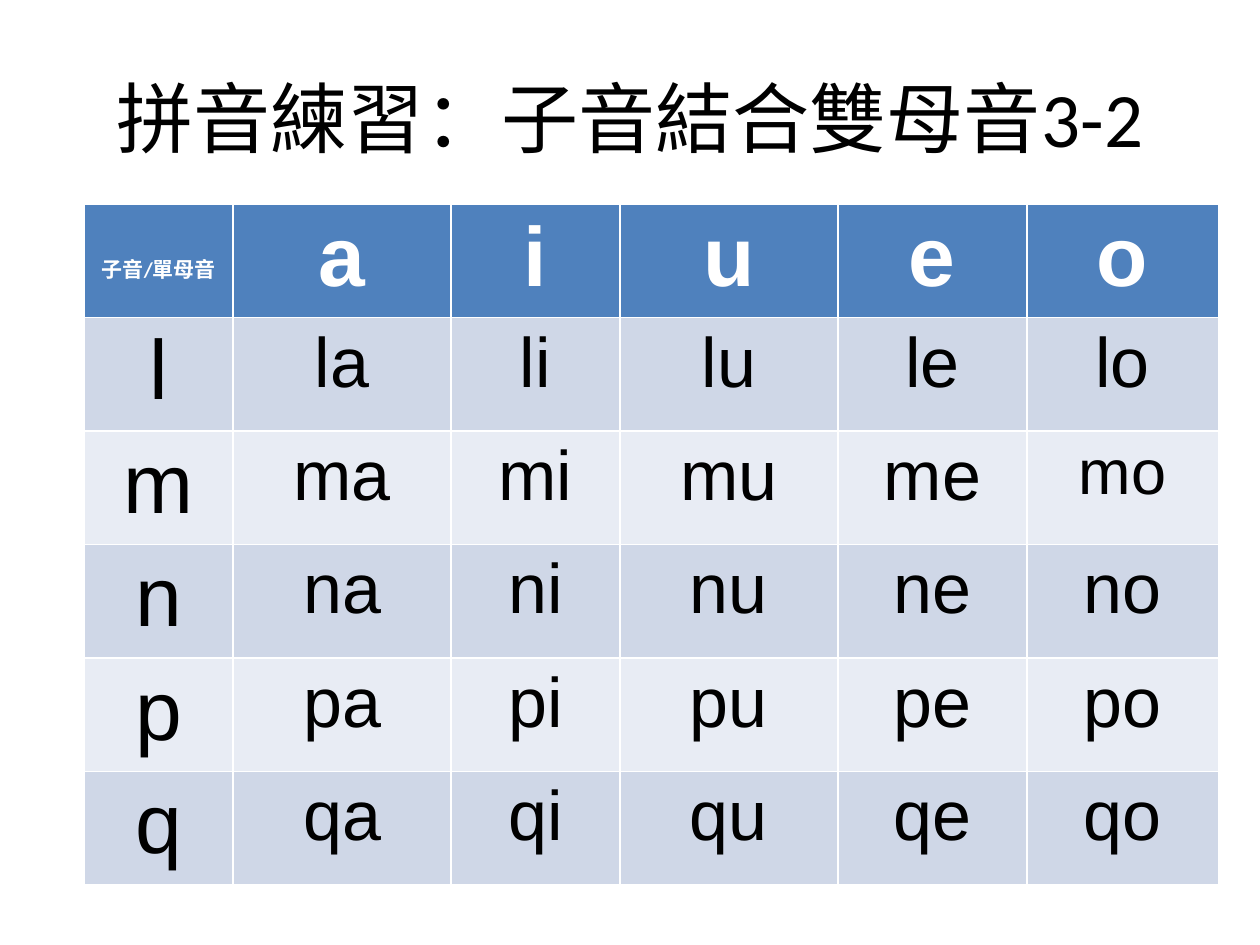
from pptx import Presentation
from pptx.dml.color import RGBColor
from pptx.enum.text import MSO_ANCHOR, PP_ALIGN
from pptx.util import Inches, Pt

CENTER = PP_ALIGN.CENTER
MIDDLE = MSO_ANCHOR.MIDDLE
BLACK = RGBColor(0x00, 0x00, 0x00)
WHITE = RGBColor(0xFF, 0xFF, 0xFF)
BLUE = RGBColor(0x4F, 0x81, 0xBD)
BANDS = (RGBColor(0xCF, 0xD7, 0xE7), RGBColor(0xE8, 0xEC, 0xF4))

WIDTH, HEIGHT = Inches(10), Inches(7.5)
COLS = (1.18, 1.73, 1.34, 1.73, 1.5, 1.52)
ROW = 0.87
VOWELS = "aiueo"
ONSETS = "lmnpq"

TITLE = {"name": "Calibri", "size": Pt(44)}
CORNER = {"name": "Calibri", "size": Pt(12), "bold": True}
HEAD = {"name": "Arial", "size": Pt(48), "bold": True}
ONSET = {"name": "Arial", "size": Pt(48), "bold": False}
BLEND = {"name": "Arial", "size": Pt(40), "bold": False}
SMALL = {**BLEND, "size": Pt(36)}


def write(frame, text, style, color):
    par = frame.paragraphs[0]
    par.alignment = CENTER
    run = par.add_run()
    run.text = text
    for key, value in style.items():
        setattr(run.font, key, value)
    run.font.color.rgb = color


def add_title(slide, text):
    box = slide.shapes.add_textbox(
        int(WIDTH * 0.05), int(HEIGHT * 0.04), int(WIDTH * 0.9), int(HEIGHT / 6)
    )
    frame = box.text_frame
    frame.word_wrap = True
    frame.vertical_anchor = MIDDLE
    write(frame, text, TITLE, BLACK)


def fill_cell(cell, text, style, color, fill):
    cell.fill.solid()
    cell.fill.fore_color.rgb = fill
    write(cell.text_frame, text, style, color)


def add_grid(slide):
    count = len(ONSETS) + 1
    frame = slide.shapes.add_table(
        count, len(COLS), Inches(0.67), Inches(1.62),
        Inches(sum(COLS)), Inches(ROW * count),
    )
    table = frame.table
    for col, width in zip(table.columns, COLS):
        col.width = Inches(width)
    for row in table.rows:
        row.height = Inches(ROW)

    corner = table.cell(0, 0)
    corner.margin_top = Inches(0.39)
    fill_cell(corner, "子音/單母音", CORNER, WHITE, BLUE)
    for col, vowel in enumerate(VOWELS, 1):
        fill_cell(table.cell(0, col), vowel, HEAD, WHITE, BLUE)

    for row, onset in enumerate(ONSETS, 1):
        band = BANDS[(row - 1) % 2]
        fill_cell(table.cell(row, 0), onset, ONSET, BLACK, band)
        for col, vowel in enumerate(VOWELS, 1):
            text = onset + vowel
            style = SMALL if text == "mo" else BLEND
            fill_cell(table.cell(row, col), text, style, BLACK, band)


def main():
    deck = Presentation()
    deck.slide_width, deck.slide_height = WIDTH, HEIGHT
    slide = deck.slides.add_slide(deck.slide_layouts[6])
    add_title(slide, "拼音練習：子音結合雙母音3-2")
    add_grid(slide)
    deck.save("out.pptx")


if __name__ == "__main__":
    main()
